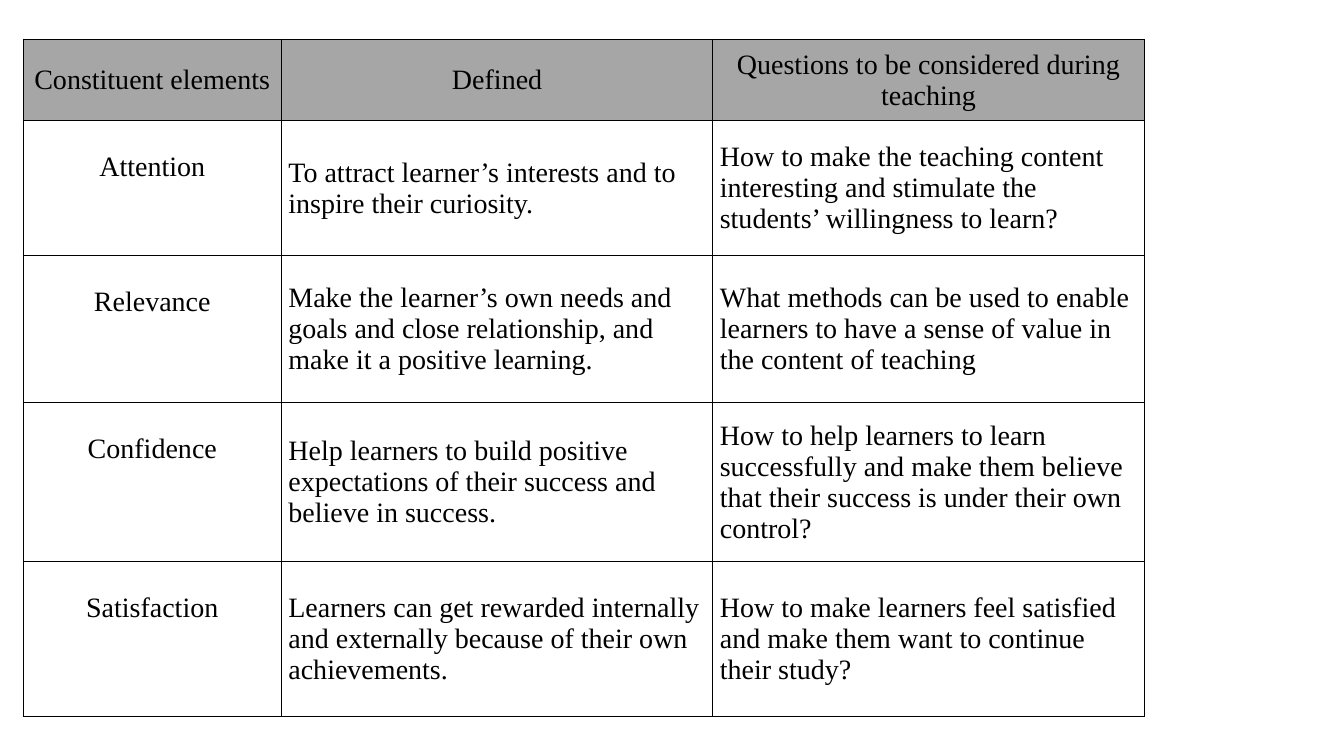
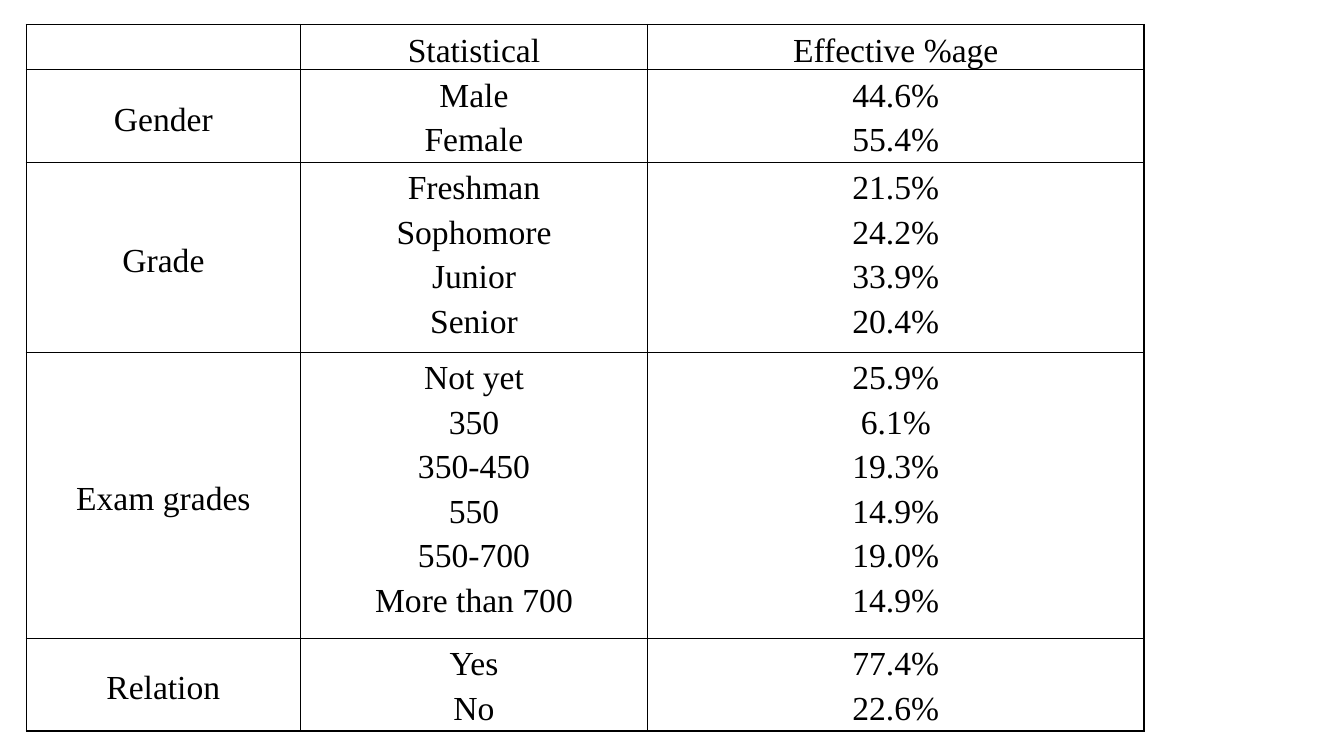
from lxml import etree
from pptx import Presentation, util as u
from pptx.dml.color import RGBColor
from pptx.enum import text
from pptx.oxml import ns

Pt = u.Pt
COLORS = {"ink": "000000", "header": "A6A6A6"}
FONT = "Times New Roman"
TOP, MIDDLE, BOTTOM = (text.MSO_ANCHOR.TOP, text.MSO_ANCHOR.MIDDLE,
                       text.MSO_ANCHOR.BOTTOM)
LEFT, CENTER = text.PP_ALIGN.LEFT, text.PP_ALIGN.CENTER

ELEMENTS = [
    ["Constituent elements", "Defined",
     "Questions to be considered during teaching"],
    ["Attention",
     "To attract learner’s interests and to inspire their curiosity.",
     "How to make the teaching content interesting and stimulate the "
     "students’ willingness to learn?"],
    ["Relevance",
     "Make the learner’s own needs and goals and close relationship, "
     "and make it a positive learning.",
     "What methods can be used to enable learners to have a sense of "
     "value in the content of teaching"],
    ["Confidence",
     "Help learners to build positive expectations of their success "
     "and believe in success.",
     "How to help learners to learn successfully and make them believe "
     "that their success is under their own control?"],
    ["Satisfaction",
     "Learners can get rewarded internally and externally because of "
     "their own achievements.",
     "How to make learners feel satisfied and make them want to "
     "continue their study?"],
]

STATISTICS = [
    ("Gender", [("Male", "44.6%"), ("Female", "55.4%")]),
    ("Grade", [("Freshman", "21.5%"), ("Sophomore", "24.2%"),
               ("Junior", "33.9%"), ("Senior", "20.4%")]),
    ("Exam grades", [("Not yet", "25.9%"), ("350", "6.1%"),
                     ("350-450", "19.3%"), ("550", "14.9%"),
                     ("550-700", "19.0%"), ("More than 700", "14.9%")]),
    ("Relation", [("Yes", "77.4%"), ("No", "22.6%")]),
]


def set_all(obj, values):
    for name, value in values.items():
        setattr(obj, name, value)


def add_borders(cell):
    tc_pr = cell._tc.get_or_add_tcPr()
    for side in ("lnL", "lnR", "lnT", "lnB"):
        ln = etree.SubElement(tc_pr, ns.qn(f"a:{side}"), w=str(Pt(1)))
        fill = etree.SubElement(ln, ns.qn("a:solidFill"))
        etree.SubElement(fill, ns.qn("a:srgbClr"), val=COLORS["ink"])


def fill_cell(cell, lines, size, align=CENTER, anchor=MIDDLE, top=0,
              spacing=1.0, fill=None):
    add_borders(cell)
    if fill:
        cell.fill.solid()
        cell.fill.fore_color.rgb = RGBColor.from_string(COLORS[fill])
    else:
        cell.fill.background()
    set_all(cell, {"margin_left": Pt(5), "margin_right": Pt(5),
                   "margin_top": Pt(top), "margin_bottom": 0,
                   "vertical_anchor": anchor})
    tf = cell.text_frame
    tf.text = "\n".join(lines)
    for p in tf.paragraphs:
        set_all(p, {"alignment": align, "line_spacing": spacing})
        for font in [p.font] + [r.font for r in p.runs]:
            set_all(font, {"name": FONT, "size": Pt(size), "bold": False})
            font.color.rgb = RGBColor.from_string(COLORS["ink"])


def add_grid(slide, left, top, widths, heights):
    frame = slide.shapes.add_table(
        len(heights), len(widths), Pt(left), Pt(top),
        Pt(sum(widths)), Pt(sum(heights)))
    table = frame.table
    set_all(table, {"first_row": False, "horz_banding": False})
    for column, width in zip(table.columns, widths):
        column.width = Pt(width)
    for row, height in zip(table.rows, heights):
        row.height = Pt(height)
    return table


def elements_table(slide, left, top):
    table = add_grid(slide, left, top, [184.4, 308.2, 308.2],
                     [58, 96.5, 105, 113.5, 110.8])
    styles = {
        "header": {"fill": "header"},
        "name": {"anchor": TOP, "top": 22.2},
        "body": {"align": LEFT},
    }
    for i, row in enumerate(ELEMENTS):
        for j, words in enumerate(row):
            role = "header" if i == 0 else "name" if j == 0 else "body"
            fill_cell(table.cell(i, j), [words], 20, **styles[role])


def statistics_table(slide, left, top):
    table = add_grid(slide, left, top, [195.8, 248, 354.6],
                     [32.4, 66.3, 135.6, 204.2, 66.3])
    style = {"size": 24, "spacing": 1.2}
    headers = [("", MIDDLE), ("Statistical", MIDDLE),
               ("Effective %age", BOTTOM)]
    for j, (words, anchor) in enumerate(headers):
        fill_cell(table.cell(0, j), [words], anchor=anchor, **style)
    for i, (group, entries) in enumerate(STATISTICS, 1):
        fill_cell(table.cell(i, 0), [group], **style)
        for j, lines in enumerate(zip(*entries), 1):
            fill_cell(table.cell(i, j), lines, anchor=TOP, **style)


def main():
    prs = Presentation()
    set_all(prs, {"slide_width": Pt(960), "slide_height": Pt(540)})
    for build, left, top in [(elements_table, 16.6, 28.2),
                             (statistics_table, 18.8, 17.4)]:
        build(prs.slides.add_slide(prs.slide_layouts[6]), left, top)
    prs.save("out.pptx")


if __name__ == "__main__":
    main()
